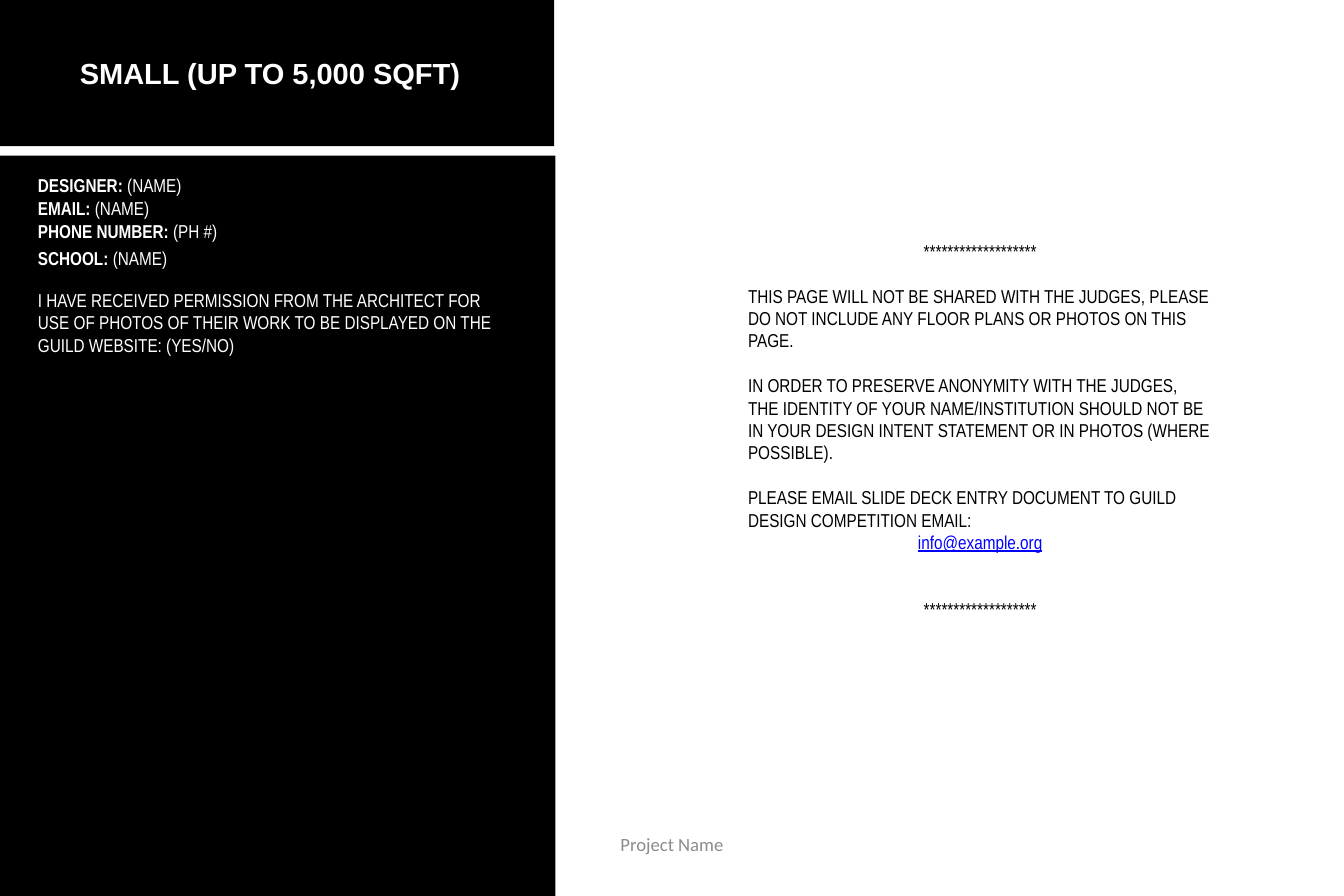
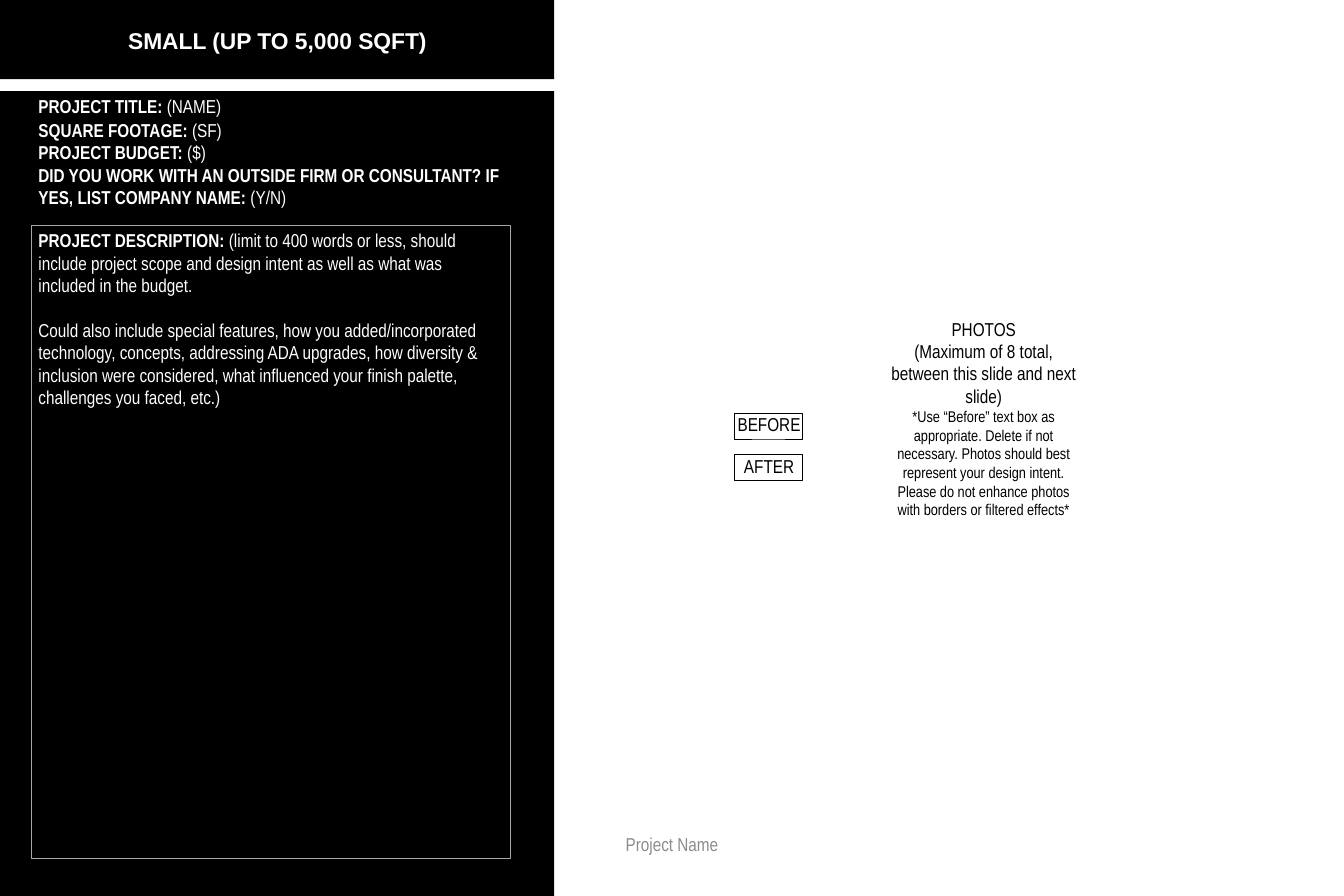
import dataclasses

import pptx
import pptx.dml.color
import pptx.enum.shapes
import pptx.enum.text
import pptx.util

Pt = pptx.util.Pt
RGB = pptx.dml.color.RGBColor.from_string
ALIGN = pptx.enum.text.PP_ALIGN
FIT = pptx.enum.text.MSO_AUTO_SIZE


@dataclasses.dataclass(frozen=True)
class Theme:
    black: str = "000000"
    white: str = "FFFFFF"
    link: str = "0000FF"
    muted: str = "8C8C8C"
    outline: str = "A6A6A6"
    title_font: str = "Arial"
    body_font: str = "Arial Narrow"
    cover_footer_font: str = "Calibri"
    cover_title: int = 28
    project_title: int = 22
    body: int = 18
    note: int = 15
    line: float = 21.6  # height of one body line, used as paragraph gap


THEME = Theme()
SLIDE_WIDTH, SLIDE_HEIGHT = 1296, 864
PANEL_WIDTH = 534.24
FIELD_LEFT, FIELD_WIDTH = 30, 462
INSETS = (7.2, 3.6, 7.2, 3.6)
CAPTION_INSETS = (1.44, 0, 0, 0)
CATEGORY = "SMALL (UP TO 5,000 SQFT)"


@dataclasses.dataclass(frozen=True)
class Para:
    text: str
    label: str = ""  # bold lead-in
    align: ALIGN = ALIGN.LEFT
    gap: float = 0
    size: float = THEME.body
    color: str = ""
    underline: bool = False


def format_run(run, font, size, color, bold=False, underline=False):
    run.font.name = font
    run.font.size = Pt(size)
    run.font.color.rgb = RGB(color)
    run.font.bold = bold
    run.font.underline = underline


def write(frame, paras, color, font=THEME.body_font, insets=INSETS, fit=FIT.NONE):
    frame.word_wrap = True
    frame.auto_size = fit
    frame.vertical_anchor = pptx.enum.text.MSO_ANCHOR.TOP
    (frame.margin_left, frame.margin_top,
     frame.margin_right, frame.margin_bottom) = map(Pt, insets)
    for index, para in enumerate(paras):
        paragraph = frame.add_paragraph() if index else frame.paragraphs[0]
        paragraph.alignment = para.align
        paragraph.space_before = Pt(para.gap)
        for text, bold in ((para.label, True), (para.text, False)):
            if text:
                run = paragraph.add_run()
                run.text = text
                format_run(run, font, para.size, para.color or color, bold, para.underline)


def add_text(slide, box, paras, color, **style):
    textbox = slide.shapes.add_textbox(*map(Pt, box))
    write(textbox.text_frame, paras, color, **style)


def add_rect(slide, box, fill=None, line=None, weight=0.75):
    rect = slide.shapes.add_shape(
        pptx.enum.shapes.MSO_SHAPE.RECTANGLE, *map(Pt, box))
    rect.shadow.inherit = False
    if fill:
        rect.fill.solid()
        rect.fill.fore_color.rgb = RGB(fill)
    else:
        rect.fill.background()
    if line:
        rect.line.color.rgb = RGB(line)
        rect.line.width = Pt(weight)
    else:
        rect.line.fill.background()
    return rect


def add_header(slide, band, panel, title_box, size):
    """Black title band and side panel, with the title on top."""
    for box in (band, panel):
        add_rect(slide, box, fill=THEME.black)
    title = slide.shapes.title
    title.left, title.top, title.width, title.height = map(Pt, title_box)
    frame = title.text_frame
    frame.text = CATEGORY
    frame.word_wrap = True
    frame.auto_size = FIT.NONE
    frame.vertical_anchor = pptx.enum.text.MSO_ANCHOR.MIDDLE
    frame.paragraphs[0].alignment = ALIGN.CENTER
    format_run(frame.paragraphs[0].runs[0], THEME.title_font, size, THEME.white, bold=True)
    title.element.getparent().append(title.element)  # bring above the band


def add_footer(slide, font):
    width = 414.72
    add_text(slide, ((SLIDE_WIDTH - width) / 2, 803.52, width, 43.2),
             [Para("Project Name", align=ALIGN.CENTER)], THEME.muted,
             font=font, insets=(0, 0, 0, 0))


def add_entrant(slide, box):
    """Contact fields and the permission statement."""
    left, top, width, _ = box
    fields = ((0, "DESIGNER: ", "(NAME)"), (22, "EMAIL: ", "(NAME)"),
              (44, "PHONE NUMBER: ", "(PH #)"), (70, "SCHOOL: ", "(NAME)"))
    for offset, label, value in fields:
        add_text(slide, (left, top + offset, width, 29), [Para(value, label)],
                 THEME.white, fit=FIT.SHAPE_TO_FIT_TEXT)
    permission = Para("I HAVE RECEIVED PERMISSION FROM THE ARCHITECT FOR USE OF PHOTOS OF "
                      "THEIR WORK TO BE DISPLAYED ON THE GUILD WEBSITE: (YES/NO)")
    add_text(slide, (left, top + 111, width, 72.7), [permission],
             THEME.white, fit=FIT.SHAPE_TO_FIT_TEXT)


def add_instructions(slide, box):
    """Submission rules between two rows of asterisks."""
    stars = "*" * 19
    add_text(slide, box, [
        Para(stars, align=ALIGN.CENTER),
        Para("THIS PAGE WILL NOT BE SHARED WITH THE JUDGES, PLEASE DO NOT INCLUDE "
             "ANY FLOOR PLANS OR PHOTOS ON THIS PAGE.", gap=THEME.line),
        Para("IN ORDER TO PRESERVE ANONYMITY WITH THE JUDGES, THE IDENTITY OF YOUR "
             "NAME/INSTITUTION SHOULD NOT BE IN YOUR DESIGN INTENT STATEMENT OR IN "
             "PHOTOS (WHERE POSSIBLE).", gap=THEME.line),
        Para("PLEASE EMAIL SLIDE DECK ENTRY DOCUMENT TO GUILD DESIGN COMPETITION EMAIL:",
             gap=THEME.line),
        Para("info@example.org", align=ALIGN.CENTER, color=THEME.link, underline=True),
        Para(stars, align=ALIGN.CENTER, gap=2 * THEME.line),
    ], THEME.black, fit=FIT.SHAPE_TO_FIT_TEXT)


def add_project(slide, box):
    """Project facts above the outlined description."""
    left, top, width, height = box
    add_text(slide, (left, top, width, 51), [Para("(NAME)", "PROJECT TITLE: ")], THEME.white)
    add_text(slide, (left, top + 23, width, 94.3), [
        Para("(SF)", "SQUARE FOOTAGE: "),
        Para("($)", "PROJECT BUDGET: "),
        Para("(Y/N)", "DID YOU WORK WITH AN OUTSIDE FIRM OR CONSULTANT? "
                      "IF YES, LIST COMPANY NAME: "),
    ], THEME.white, fit=FIT.SHAPE_TO_FIT_TEXT)
    offset = 129.6
    description = add_rect(slide, (left, top + offset, width, height - offset),
                           line=THEME.outline, weight=0.25)
    write(description.text_frame, [
        Para("(limit to 400 words or less, should include project scope and design "
             "intent as well as what was included in the budget.", "PROJECT DESCRIPTION: "),
        Para("Could also include special features, how you added/incorporated technology, "
             "concepts, addressing ADA upgrades, how diversity & inclusion were considered, "
             "what influenced your finish palette, challenges you faced, etc.)",
             gap=THEME.line),
    ], THEME.white)


def add_photo_area(slide, box):
    """Before and after tags beside the photo guidance."""
    left, top, width, height = box
    for index, tag in enumerate(("BEFORE", "AFTER")):
        tag_box = add_rect(slide, (left, top + 92.16 + index * 40.32, 66.24, 25.2),
                           line=THEME.black)
        write(tag_box.text_frame, [Para(tag, align=ALIGN.CENTER)],
              THEME.black, insets=CAPTION_INSETS)
    guidance_offset = 144
    add_text(slide, (left + guidance_offset, top, width - guidance_offset, height), [
        Para("PHOTOS", align=ALIGN.CENTER),
        Para("(Maximum of 8 total, between this slide and next slide)", align=ALIGN.CENTER),
        Para("*Use “Before” text box as appropriate. Delete if not necessary. Photos should "
             "best represent your design intent. Please do not enhance photos with borders "
             "or filtered effects*", align=ALIGN.CENTER, size=THEME.note),
    ], THEME.black, insets=CAPTION_INSETS)


def build_entrant_slide(slide):
    panel_top = 150
    add_header(slide, (0, 0, PANEL_WIDTH, 141),
               (0, panel_top, 535.68, SLIDE_HEIGHT - panel_top),
               (13.68, 49.68, 493.2, 41), THEME.cover_title)
    add_entrant(slide, (FIELD_LEFT - 0.5, 164, FIELD_WIDTH, 184))
    add_footer(slide, THEME.cover_footer_font)
    add_instructions(slide, (714.24, 227.5, FIELD_WIDTH, 399.6))


def build_project_slide(slide):
    panel_top = 87.84
    add_header(slide, (0, 0, PANEL_WIDTH, 76.3),
               (0, panel_top, PANEL_WIDTH, SLIDE_HEIGHT - panel_top),
               (20.88, 21.6, 493.2, 33.84), THEME.project_title)
    add_project(slide, (FIELD_LEFT, panel_top, FIELD_WIDTH, 739.4))
    add_footer(slide, THEME.body_font)
    add_photo_area(slide, (707.76, 306, 336.24, 210.24))


def main():
    deck = pptx.Presentation()
    deck.slide_width, deck.slide_height = Pt(SLIDE_WIDTH), Pt(SLIDE_HEIGHT)
    title_only = deck.slide_layouts[5]
    for build in (build_entrant_slide, build_project_slide):
        build(deck.slides.add_slide(title_only))
    deck.save("out.pptx")


if __name__ == "__main__":
    main()
